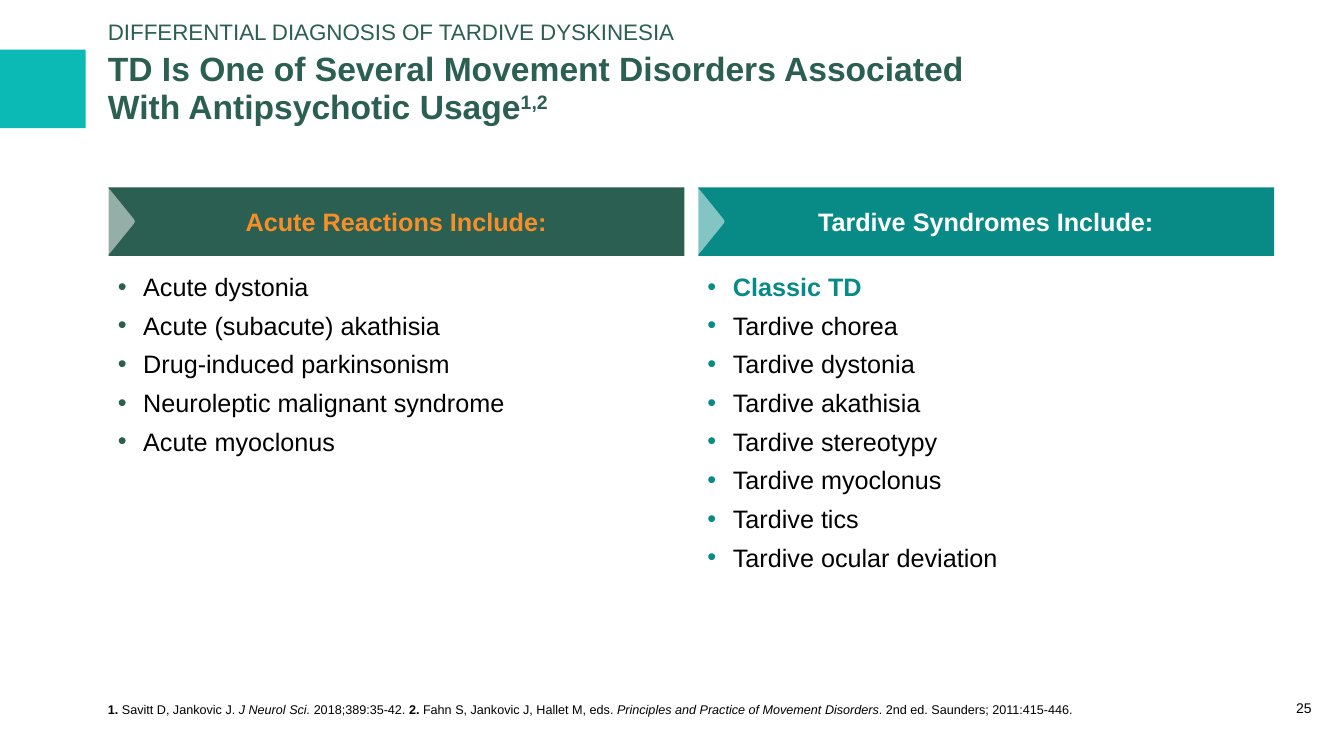
from lxml import etree
from pptx import Presentation
from pptx.dml.color import RGBColor
from pptx.enum.shapes import MSO_SHAPE as Preset
from pptx.enum.text import MSO_ANCHOR as Anchor, PP_ALIGN as Align
from pptx.oxml.ns import qn
from pptx.util import Cm, Pt

GREEN, TEAL, AQUA = "2B5F51", "088B87", "0BBAB4"
ORANGE, WHITE, BLACK = "F78F28", "FFFFFF", "000000"

# Content: runs are (text, styles), b = bold, i = italic, s = superscript
TOPIC = [("DIFFERENTIAL DIAGNOSIS OF TARDIVE DYSKINESIA", "")]
TITLE = [("TD Is One of Several Movement Disorders Associated\v"
          "With Antipsychotic Usage", "b"), ("1,2", "bs")]
REFERENCES = [
    ("1. ", "b"), ("Savitt D, Jankovic J. ", ""), ("J Neurol Sci. ", "i"),
    ("2018;389:35-42. ", ""), ("2.", "b"),
    (" Fahn S, Jankovic J, Hallet M, eds. ", ""),
    ("Principles and Practice of Movement Disorders", "i"),
    (". 2nd ed. Saunders; 2011:415-446.", ""),
]
PAGE_NUMBER = [("25", "")]
COLUMNS = [
    {"heading": "Acute Reactions Include:", "band": GREEN, "text": ORANGE,
     "items": ["Acute dystonia", "Acute (subacute) akathisia",
               "Drug-induced parkinsonism", "Neuroleptic malignant syndrome",
               "Acute myoclonus"]},
    {"heading": "Tardive Syndromes Include:", "band": TEAL, "text": WHITE,
     "items": ["Classic TD", "Tardive chorea", "Tardive dystonia",
               "Tardive akathisia", "Tardive stereotypy", "Tardive myoclonus",
               "Tardive tics", "Tardive ocular deviation"]},
]
HIGHLIGHTED = "Classic TD"

# Layout in centimetres
LEFT, COLUMN_WIDTH, COLUMN_STEP = 2.72, 14.53, 14.86
BAND_TOP, BAND_HEIGHT = 4.72, 1.73
LIST_TOP, LIST_HEIGHT = 6.71, 9.32
CHEVRON = [(0, 0.07), (0.08, 0), (0.13, 0.04), (0.73, 0.78), (0.75, 0.83),
           (0.73, 0.88), (0.13, 1.62), (0.08, 1.66), (0, 1.59)]


def color(value):
    return RGBColor.from_string(value)


def paint(shape, fill):
    shape.fill.solid()
    shape.fill.fore_color.rgb = color(fill)
    shape.line.fill.background()
    shape.shadow.inherit = False


def add_rectangle(slide, left, top, width, height, fill):
    shape = slide.shapes.add_shape(
        Preset.RECTANGLE, Cm(left), Cm(top), Cm(width), Cm(height))
    paint(shape, fill)
    return shape


def set_frame(shape, anchor, side=0, end=0):
    frame = shape.text_frame
    frame.word_wrap = True
    frame.vertical_anchor = anchor
    frame.margin_left = frame.margin_right = Cm(side)
    frame.margin_top = frame.margin_bottom = Cm(end)
    return frame


def add_runs(paragraph, runs, size, text_color):
    for number, (text, styles) in enumerate(runs):
        for line_number, line in enumerate(text.split("\v")):
            if line_number:
                paragraph.add_line_break()
            run = paragraph.add_run()
            run.text = line
            run.font.name = "Arial"
            run.font.size = Pt(size)
            run.font.bold = "b" in styles
            run.font.italic = "i" in styles
            run.font.color.rgb = color(text_color)
            if "s" in styles:
                run._r.get_or_add_rPr().set("baseline", "30000")


def add_text(slide, box, runs, size, text_color, anchor, align=Align.LEFT,
             line_spacing=0.95):
    shape = slide.shapes.add_textbox(*(Cm(length) for length in box))
    paragraph = set_frame(shape, anchor).paragraphs[0]
    paragraph.alignment = align
    paragraph.line_spacing = line_spacing
    add_runs(paragraph, runs, size, text_color)


def add_bullet(paragraph, bullet_color):
    properties = paragraph._p.get_or_add_pPr()
    properties.set("marL", str(Cm(0.64)))
    properties.set("indent", str(-Cm(0.64)))
    paragraph.space_after = Pt(6)
    holder = etree.SubElement(properties, qn("a:buClr"))
    etree.SubElement(holder, qn("a:srgbClr"), val=bullet_color)
    etree.SubElement(properties, qn("a:buFont"), typeface="Arial")
    etree.SubElement(properties, qn("a:buChar"), char="•")


def add_band(slide, left, column):
    band = add_rectangle(slide, left, BAND_TOP, COLUMN_WIDTH, BAND_HEIGHT,
                         column["band"])
    paragraph = set_frame(band, Anchor.MIDDLE, 0.25, 0.25).paragraphs[0]
    paragraph.alignment = Align.CENTER
    add_runs(paragraph, [(column["heading"], "b")], 18, column["text"])


def add_list(slide, left, column):
    box = slide.shapes.add_textbox(
        Cm(left), Cm(LIST_TOP), Cm(COLUMN_WIDTH), Cm(LIST_HEIGHT))
    frame = set_frame(box, Anchor.TOP, 0.25, 0.13)
    for number, item in enumerate(column["items"]):
        paragraph = frame.add_paragraph() if number else frame.paragraphs[0]
        add_bullet(paragraph, column["band"])
        marked = item == HIGHLIGHTED
        add_runs(paragraph, [(item, "b" if marked else "")], 18,
                 TEAL if marked else BLACK)


def add_chevron(slide, left):
    points = [(Cm(left - 0.07 + x), Cm(BAND_TOP + 0.03 + y))
              for x, y in CHEVRON]
    builder = slide.shapes.build_freeform(*points[0])
    builder.add_line_segments(points[1:], close=True)
    chevron = builder.convert_to_shape()
    paint(chevron, WHITE)
    fill = chevron._element.spPr.find(qn("a:solidFill"))
    etree.SubElement(fill[0], qn("a:alpha"), val="50000")
    # White strip that trims the chevron at the band's edge
    add_rectangle(slide, left - 0.21, BAND_TOP, 0.23, BAND_HEIGHT, WHITE)


def main():
    presentation = Presentation()
    presentation.slide_width, presentation.slide_height = Cm(33.87), Cm(19.05)
    slide = presentation.slides.add_slide(presentation.slide_layouts[6])

    # Title area
    add_rectangle(slide, 0, 1.25, 2.16, 1.98, AQUA)
    add_text(slide, (LEFT, 0.99, 25.04, 2.51), TITLE, 24, GREEN, Anchor.MIDDLE)
    add_text(slide, (LEFT, 0.46, 26.06, 0.71), TOPIC, 16, GREEN, Anchor.MIDDLE)

    # Footer
    add_text(slide, (32.44, 16.97, 0.84, 1.09), PAGE_NUMBER, 10, BLACK,
             Anchor.BOTTOM, Align.CENTER)
    add_text(slide, (LEFT, 16.66, 29.36, 1.42), REFERENCES, 9, BLACK,
             Anchor.BOTTOM, line_spacing=1.0)

    # Columns
    for number, column in enumerate(COLUMNS):
        left = LEFT + number * COLUMN_STEP
        add_band(slide, left, column)
        add_list(slide, left, column)
        add_chevron(slide, left)

    presentation.save("out.pptx")


if __name__ == "__main__":
    main()
